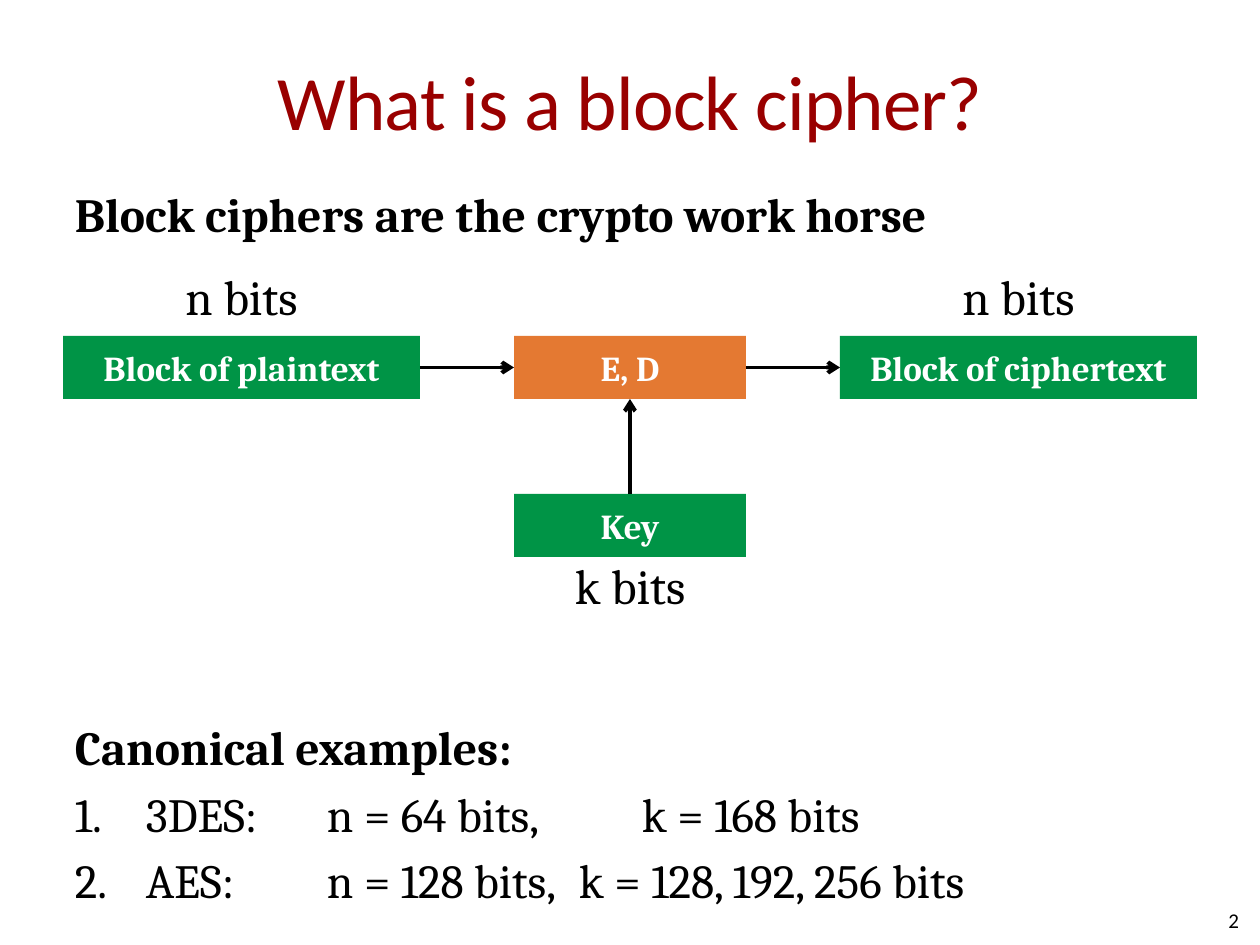
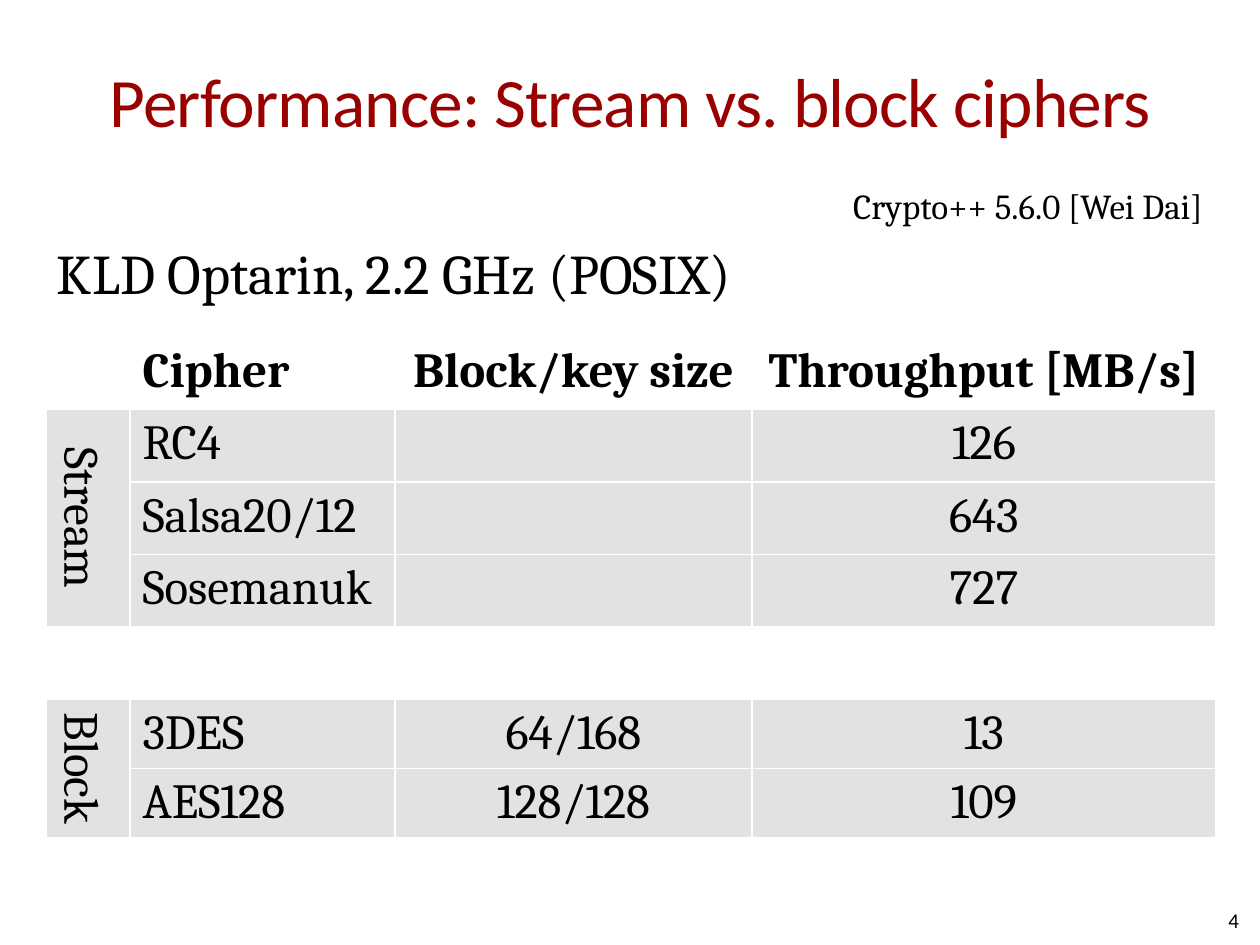
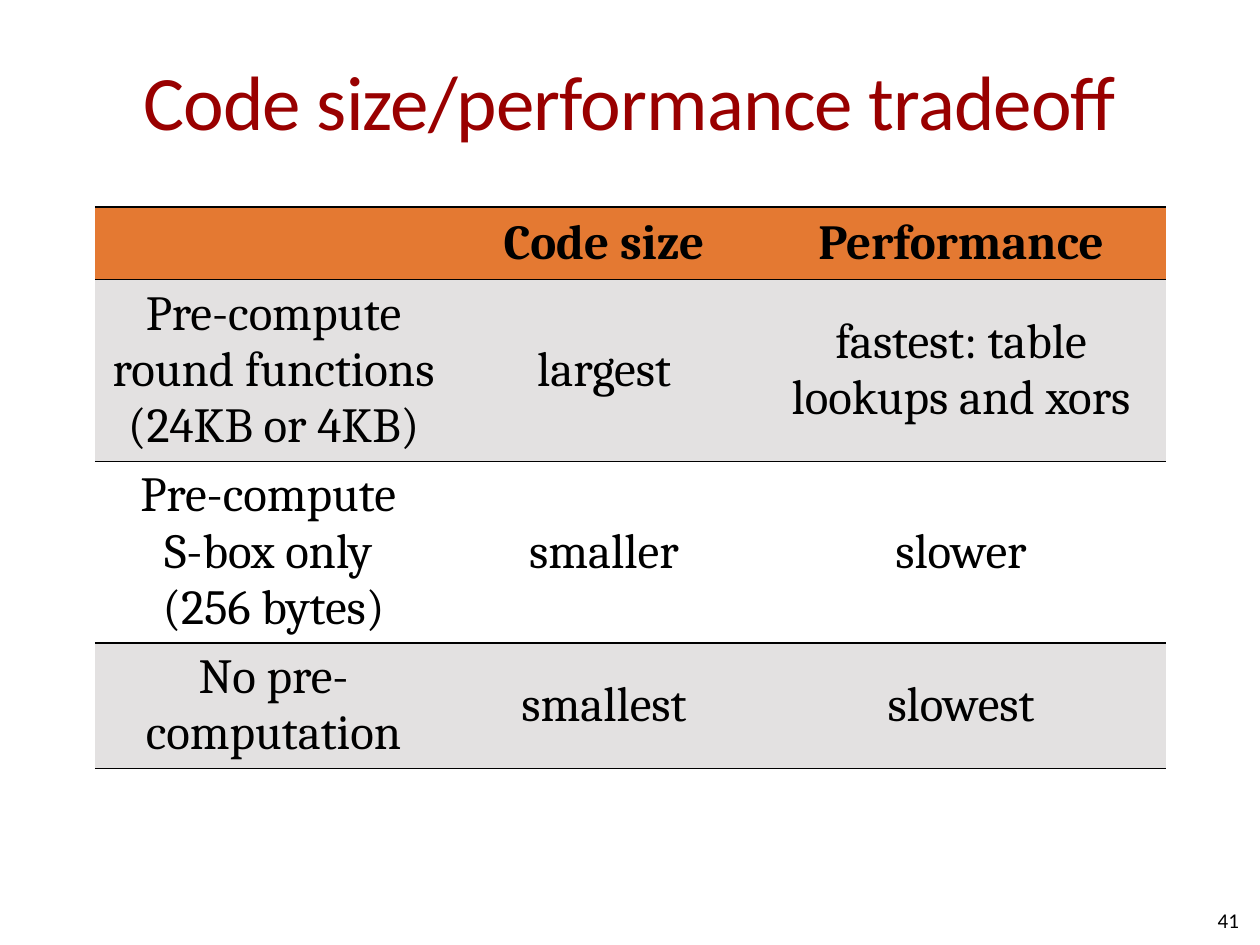
import pptx
import pptx.util
import pptx.dml.color
import pptx.enum.shapes
import pptx.enum.text
import pptx.oxml
import pptx.oxml.ns

PX = 914400 / 126
COLORS = {"title": "990000", "ink": "000000", "paper": "FFFFFF",
          "green": "009446", "orange": "E47932", "gray": "E3E1E1"}
ALIGN = pptx.enum.text.PP_ALIGN
ANCHOR = pptx.enum.text.MSO_ANCHOR
BODY, SANS = "Cambria", "Calibri"

# Content: titles as (text, size, slide number)
TITLES = [("What is a block cipher?", 44, "2"),
          ("Performance: Stream vs. block ciphers", 39.6, "4"),
          ("Code size/performance tradeoff", 44, "41")]

HEADING = "Block ciphers are the crypto work horse"
EXAMPLES_HEADING = "Canonical examples:"
EXAMPLES = ["3DES: \tn = 64 bits, \t\tk = 168 bits",
            "AES: \t\tn = 128 bits, \tk = 128, 192, 256 bits"]

# Diagram: name -> (text, fill, left, top, width, label, label top)
BOXES = {
    "plaintext": ("Block of plaintext", "green", 63, 336, 357, "n bits", 267),
    "key": ("Key", "green", 514, 494, 232, "k bits", 556),
    "ciphertext": ("Block of ciphertext", "green", 840, 336, 357, "n bits", 267),
    "cipher": ("E, D", "orange", 514, 336, 232, None, None),
}
BOX_H = 63
ARROWS = [("plaintext", 3, "cipher", 1), ("key", 0, "cipher", 2),
          ("cipher", 3, "ciphertext", 1)]

SOURCE = "Crypto++ 5.6.0 [Wei Dai]"
MACHINE = "KLD Optarin, 2.2 GHz (POSIX)"
SPEEDS = [("", "Cipher", "Block/key size", "Throughput [MB/s]"),
          ("Stream", "RC4", "", "126"),
          ("", "Salsa20/12", "", "643"),
          ("", "Sosemanuk", "", "727"),
          ("", "", "", ""),
          ("Block", "3DES", "64/168", "13"),
          ("", "AES128", "128/128", "109")]
GROUPS = [(1, 3), (5, 6)]

TRADEOFF = [("", "Code size", "Performance"),
            ("Pre-compute round functions (24KB or 4KB)", "largest",
             "fastest: table lookups and xors"),
            ("Pre-compute \vS-box only \v(256 bytes)", "smaller", "slower"),
            ("No pre-computation", "smallest", "slowest")]


def px(*values):
    return [pptx.util.Emu(round(v * PX)) for v in values]


def rgb(name):
    return pptx.dml.color.RGBColor.from_string(COLORS[name])


def set_all(obj, values):
    for name, value in values.items():
        setattr(obj, name, value)


def write(p, text, size, color="ink", bold=False, font=BODY, align=ALIGN.LEFT, before=0):
    p.text = text
    set_all(p, {"alignment": align, "space_before": pptx.util.Pt(before)})
    for r in p.runs:
        set_all(r.font, {"name": font, "size": pptx.util.Pt(size), "bold": bold})
        r.font.color.rgb = rgb(color)
    return p


def frame(sp, x=0, y=0, anchor=ANCHOR.TOP, wrap=True):
    """Set the side (x) and top/bottom (y) insets and return the text frame."""
    tf = sp.text_frame
    (mx, my) = px(x, y)
    set_all(tf, {"margin_left": mx, "margin_right": mx, "margin_top": my,
                 "margin_bottom": my, "vertical_anchor": anchor, "word_wrap": wrap,
                 "auto_size": pptx.enum.text.MSO_AUTO_SIZE.NONE})
    return tf


def add_text(slide, box, **kw):
    return frame(slide.shapes.add_textbox(*px(*box)), **kw)


def add_slide(prs, title, size, number):
    slide = prs.slides.add_slide(prs.slide_layouts[5])
    sp = slide.shapes.title
    set_all(sp, dict(zip(("left", "top", "width", "height"), px(63, 21, 1134, 158))))
    p = write(frame(sp, y=6, anchor=ANCHOR.MIDDLE).paragraphs[0], title, size,
              "title", font=SANS, align=ALIGN.CENTER)
    p.runs[0].font._element.set("spc", "-50")
    tf = add_text(slide, (945, 895, 294, 50), anchor=ANCHOR.MIDDLE)
    write(tf.paragraphs[0], number, 12, font=SANS, align=ALIGN.RIGHT)
    return slide


def sub(parent, tag, **attrs):
    el = pptx.oxml.parse_xml(f"<a:{tag} {pptx.oxml.ns.nsdecls('a')}/>")
    for name, value in attrs.items():
        el.set(name, value)
    parent.append(el)
    return el


def add_arrow(slide, start, start_side, end, end_side):
    sp = slide.shapes.add_connector(pptx.enum.shapes.MSO_CONNECTOR.STRAIGHT, 0, 0, 0, 0)
    sp.begin_connect(start, start_side)
    sp.end_connect(end, end_side)
    sp.line.color.rgb = rgb("ink")
    sp.line.width = pptx.util.Pt(2.25)
    sub(sp.line._get_or_add_ln(), "tailEnd", type="arrow")
    sub(sp._element.spPr, "effectLst")


def add_table(slide, rows, left, top, widths, heights, fills, borders, aligns, anchor):
    """borders maps each side (L, R, T, B) to a colour name or None."""
    box = px(left, top, sum(widths), sum(heights))
    tbl = slide.shapes.add_table(len(rows), len(widths), *box).table
    set_all(tbl, {"first_row": False, "horz_banding": False})
    for col, w in zip(tbl.columns, px(*widths)):
        col.width = w
    for row, h in zip(tbl.rows, px(*heights)):
        row.height = h
    for i, row in enumerate(rows):
        for j, text in enumerate(row):
            cell = tbl.cell(i, j)
            cell.vertical_anchor = anchor
            tcPr = cell._tc.get_or_add_tcPr()
            for side, color in borders.items():
                ln = sub(tcPr, "ln" + side, w="12700")
                if color:
                    sub(sub(ln, "solidFill"), "srgbClr", val=COLORS[color])
                else:
                    sub(ln, "noFill")
            cell.fill.solid()
            cell.fill.fore_color.rgb = rgb(fills[i])
            p = cell.text_frame.paragraphs[0]
            write(p, text, 28, bold=i == 0, align=aligns[j])
            if not text:
                p.font.size = pptx.util.Pt(28)
    return tbl


def cipher_slide(prs):
    slide = add_slide(prs, *TITLES[0])
    # Heading and numbered examples
    tf = add_text(slide, (63, 179, 1134, 80), x=12, y=6)
    write(tf.paragraphs[0], HEADING, 27.2, bold=True, before=5.4)
    tf = add_text(slide, (63, 712, 1134, 215), x=12, y=6)
    write(tf.paragraphs[0], EXAMPLES_HEADING, 27.2, bold=True, before=5.4)
    indent = px(71)[0]
    for text in EXAMPLES:
        pPr = write(tf.add_paragraph(), text, 27.2, before=5.4)._p.get_or_add_pPr()
        for name, value in {"marL": indent, "indent": -indent, "defTabSz": 457200}.items():
            pPr.set(name, str(value))
        sub(pPr, "buFont", typeface="+mj-lt")
        sub(pPr, "buAutoNum", type="arabicPeriod")
    # Boxes with their bit sizes
    shapes = {}
    for name, (text, fill, x, y, w, label, label_y) in BOXES.items():
        sp = slide.shapes.add_shape(pptx.enum.shapes.MSO_SHAPE.RECTANGLE,
                                    *px(x, y, w, BOX_H))
        sp.shadow.inherit = False
        sp.fill.solid()
        sp.fill.fore_color.rgb = rgb(fill)
        sp.line.fill.background()
        write(frame(sp, anchor=ANCHOR.MIDDLE).paragraphs[0], text, 20, "paper", True,
              align=ALIGN.CENTER)
        shapes[name] = sp
        if label:
            tf = add_text(slide, (x + w / 2 - 59, label_y, 118, 59), wrap=False)
            write(tf.paragraphs[0], label, 28, align=ALIGN.CENTER)
    for start, start_side, end, end_side in ARROWS:
        add_arrow(slide, shapes[start], start_side, shapes[end], end_side)


def speed_slide(prs):
    slide = add_slide(prs, *TITLES[1])
    tf = add_text(slide, (45, 179, 1170, 140), x=12, y=6)
    write(tf.paragraphs[0], SOURCE, 20, align=ALIGN.RIGHT, before=4)
    write(tf.add_paragraph(), MACHINE, 32, before=6.4)
    fills = ["gray" if row[1] and i else "paper" for i, row in enumerate(SPEEDS)]
    tbl = add_table(slide, SPEEDS, 46, 337, [84, 265, 357, 464], [69] * len(SPEEDS),
                    fills, dict.fromkeys("LRTB", "paper"),
                    [ALIGN.CENTER, ALIGN.LEFT, ALIGN.CENTER, ALIGN.CENTER], ANCHOR.TOP)
    # Turned group names
    for first, last in GROUPS:
        cell = tbl.cell(first, 0)
        cell.merge(tbl.cell(last, 0))
        cell._tc.get_or_add_tcPr().set("vert", "vert")


def tradeoff_slide(prs):
    slide = add_slide(prs, *TITLES[2])
    add_table(slide, TRADEOFF, 95, 207, [357, 304, 410], [69, 182, 181, 125],
              ["orange", "gray", "paper", "gray"],
              {"L": None, "R": None, "T": "ink", "B": "ink"},
              [ALIGN.CENTER] * 3, ANCHOR.MIDDLE)


def main():
    prs = pptx.Presentation()
    prs.slide_width, prs.slide_height = px(1260, 945)
    for build in (cipher_slide, speed_slide, tradeoff_slide):
        build(prs)
    prs.save("out.pptx")


if __name__ == "__main__":
    main()
